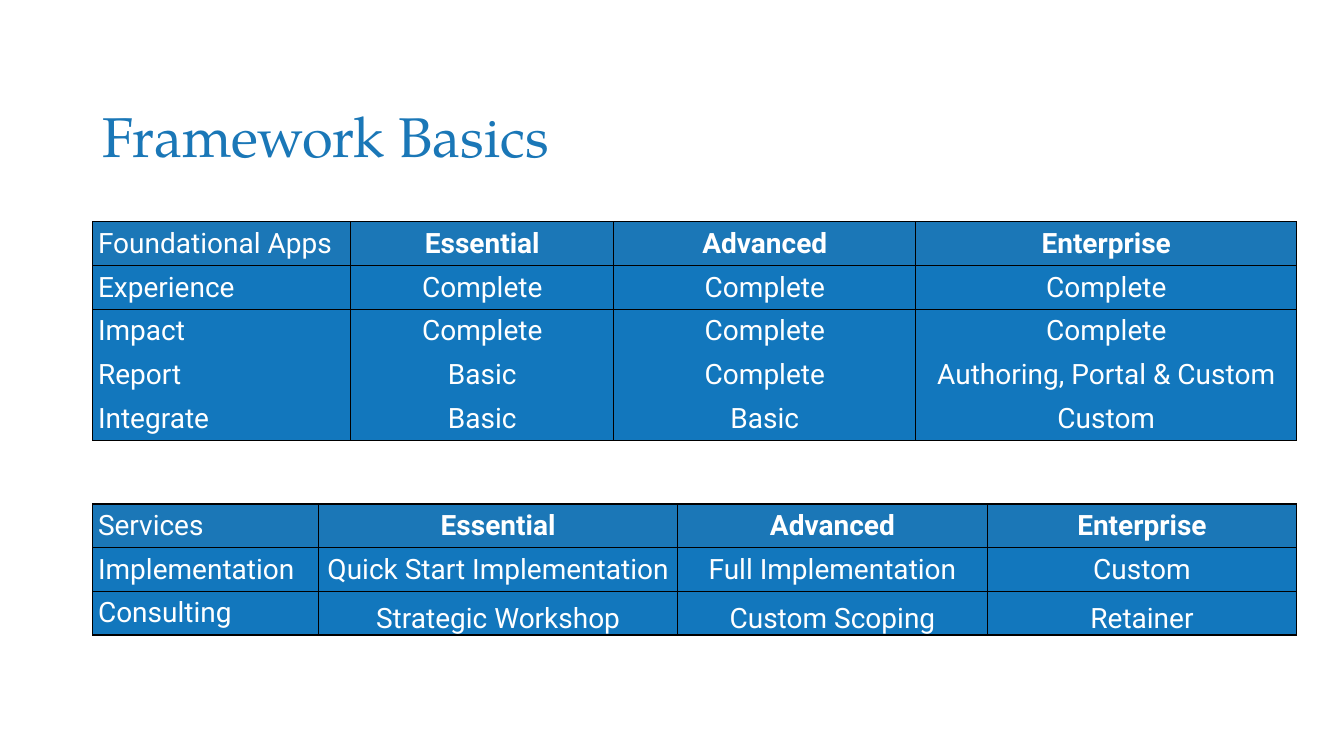
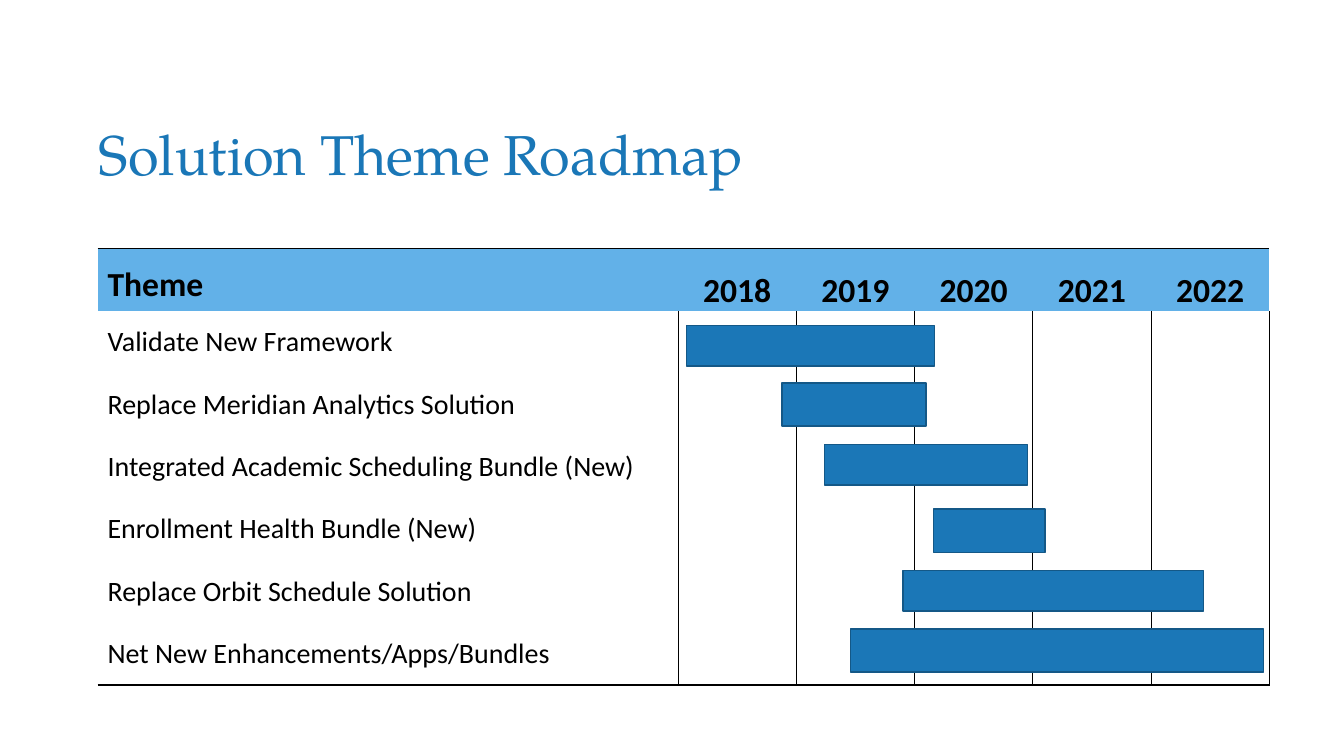
"""Build a framework overview and a theme roadmap."""
from pptx import Presentation
from pptx.dml.color import RGBColor
from pptx.enum.shapes import MSO_SHAPE as Shape
from pptx.enum.text import MSO_ANCHOR as Anchor, PP_ALIGN as Align
from pptx.oxml import parse_xml
from pptx.oxml.ns import nsdecls
from pptx.util import Cm, Pt

rgb = RGBColor.from_string
BLUE, BODY, SKY, EDGE = "1B77B7", "1277BD", "62B1E8", "145887"
BLACK, WHITE = "000000", "FFFFFF"


def grid(slide, left, top, cols, high, count):
    """Add a plain table with the given column widths and equal rows."""
    frame = slide.shapes.add_table(count, len(cols), Cm(left), Cm(top),
                                   Cm(sum(cols)), Cm(high * count))
    table = frame.table
    table.first_row = table.horz_banding = False
    for col, wide in zip(table.columns, cols):
        col.width = Cm(wide)
    for row in table.rows:
        row.height = Cm(high)
    return table


def dress(cell, text, font, size, color, bold, center, anchor, inset, sides, fill):
    """Fill one cell with text, borders on the named sides and a colour."""
    cell.text = text
    par = cell.text_frame.paragraphs[0]
    par.alignment = Align.CENTER if center else Align.LEFT
    par.font.name, par.font.size, par.font.bold = font, Pt(size), bold
    par.font.color.rgb = rgb(color)
    cell.vertical_anchor = anchor
    cell.margin_left, cell.margin_top, cell.margin_right, cell.margin_bottom = map(Cm, inset)
    props = cell._tc.get_or_add_tcPr()
    for side in "LRTB":
        paint = (f'<a:solidFill><a:srgbClr val="{BLACK}"/></a:solidFill>'
                 if side in sides else "<a:noFill/>")
        props.append(parse_xml(f'<a:ln{side} {nsdecls("a")} w="12700">{paint}</a:ln{side}>'))
    if fill:
        cell.fill.solid()
        cell.fill.fore_color.rgb = rgb(fill)
    else:
        cell.fill.background()


deck = Presentation()
deck.slide_width, deck.slide_height = Cm(33.87), Cm(19.05)

slides = []
for text, left, top in [("Framework Basics", 2.34, 2.29),
                        ("Solution Theme Roadmap", 2.24, 2.74)]:
    slide = deck.slides.add_slide(deck.slide_layouts[5])
    title = slide.shapes.title
    title.left, title.top, title.width, title.height = map(Cm, (left, top, 29.21, 2.46))
    title.text_frame.text = text
    title.text_frame.vertical_anchor = Anchor.MIDDLE
    par = title.text_frame.paragraphs[0]
    par.alignment, par.line_spacing = Align.LEFT, 0.9
    par.font.name, par.font.size = "TeX Gyre Pagella", Pt(40)
    par.font.color.rgb = rgb("1A77B7")
    slides.append(slide)
basics, plan = slides

tiers = ["Essential", "Advanced", "Enterprise"]
apps = [
    ["Foundational Apps", *tiers],
    ["Experience", "Complete", "Complete", "Complete"],
    ["Impact", "Complete", "Complete", "Complete"],
    ["Report", "Basic", "Complete", "Authoring, Portal & Custom"],
    ["Integrate", "Basic", "Basic", "Custom"],
]
works = [
    ["Services", *tiers],
    ["Implementation", "Quick Start Implementation", "Full Implementation", "Custom"],
    ["Consulting", "Strategic Workshop", "Custom Scoping", "Retainer"],
]
wide, slim = [0.13] * 4, [0.03, 0.03, 0.03, 0]
for top, cols, rows, last in [(5.59, [6.5, 6.63, 7.61, 9.6], apps, wide),
                              (12.7, [5.69, 9.05, 7.8, 7.8], works, slim)]:
    table = grid(basics, 2.34, top, cols, 1.1, len(rows))
    end = len(rows) - 1
    for r, row in enumerate(rows):
        sides = "LR" + ("T" if r < 3 else "") + ("B" if r < 2 or r == end else "")
        for c, text in enumerate(row):
            dress(table.cell(r, c), text, "Roboto", 20, WHITE, r == 0 and c > 0, c > 0,
                  Anchor.BOTTOM, last if r == end and c else wide, sides,
                  BODY if r else BLUE)

years = ["2018", "2019", "2020", "2021", "2022"]
themes = [
    ("Validate New Framework", 17.3, 8.2, 6.25),
    ("Replace Meridian Analytics Solution", 19.71, 9.65, 3.63),
    ("Integrated Academic Scheduling Bundle (New)", 20.78, 11.2, 5.11),
    ("Enrollment Health Bundle (New)", 23.52, 12.83, 2.82),
    ("Replace Orbit Schedule Solution", 22.76, 14.38, 7.57),
    ("Net New Enhancements/Apps/Bundles", 21.44, 15.85, 10.41),
]
rows = [["Theme", *years]] + [[name] + [""] * len(years) for name, *_ in themes]
table = grid(plan, 2.46, 6.27, [14.63] + [2.98] * len(years), 1.57, len(rows))
for r, row in enumerate(rows):
    for c, text in enumerate(row):
        sides = ("LR" if c else "R") + ("B" if r == len(themes) else "")
        dress(table.cell(r, c), text, "Calibri", 20 if r else 24, BLACK, r == 0, c > 0,
              Anchor.MIDDLE if r else Anchor.BOTTOM,
              [0] * 4 if c else [0.25, 0.13, 0.25, 0.13],
              sides if r else "T", None if r else SKY)

for n, (name, left, top, span) in enumerate(themes):
    bar = plan.shapes.add_shape(Shape.RECTANGLE, Cm(left), Cm(top), Cm(span),
                                Cm(1.09 if n % 2 else 1.02))
    bar.shadow.inherit = False
    bar.fill.solid()
    bar.fill.fore_color.rgb = rgb(BLUE)
    bar.line.color.rgb = rgb(EDGE)
    bar.line.width = Pt(1)

deck.save("out.pptx")
